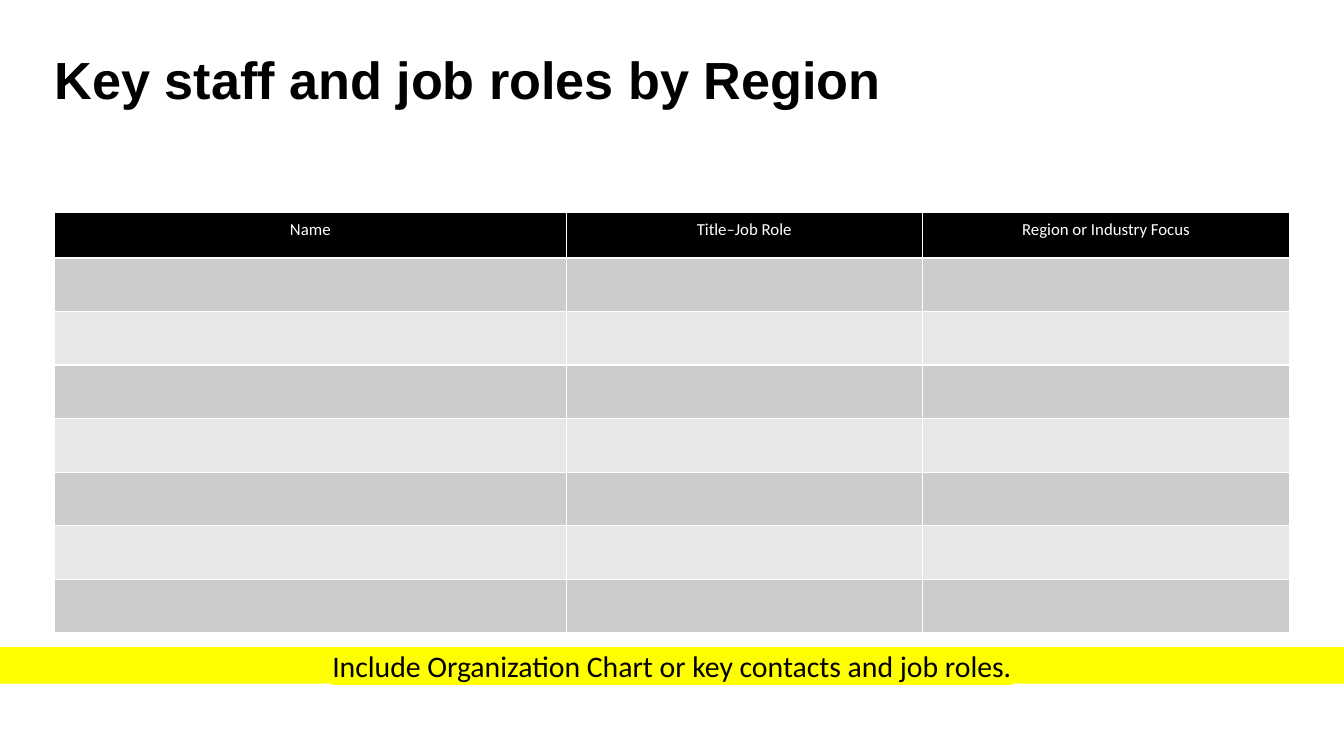
from typing import NamedTuple

from lxml import etree
from pptx import Presentation
from pptx.dml.color import RGBColor
from pptx.enum.shapes import MSO_SHAPE
from pptx.enum.text import MSO_ANCHOR, MSO_AUTO_SIZE, PP_ALIGN
from pptx.oxml.ns import qn
from pptx.util import Cm, Pt

RECT = MSO_SHAPE.RECTANGLE
MIDDLE = MSO_ANCHOR.MIDDLE
FIXED = MSO_AUTO_SIZE.NONE
LEFT, CENTER = PP_ALIGN.LEFT, PP_ALIGN.CENTER

BLACK, WHITE, YELLOW = "000000", "FFFFFF", "FFFF00"
BANDS = ("CCCCCC", "E7E7E7")
EDGE, SPAN = 1.37, 31.14
HEAD_TALL, ROW_TALL, STAFF = 1.14, 1.35, 7


class Column(NamedTuple):
    label: str
    wide: float


COLUMNS = [
    Column("Name", 12.9),
    Column("Title–Job Role", 8.97),
    Column("Region or Industry Focus", 9.27),
]


def paint(target, color: str) -> None:
    target.solid()
    target.fore_color.rgb = RGBColor.from_string(color)


def write(frame, text: str, *, size: float, color: str, font: str = "Calibri",
          bold: bool = False, align=CENTER, mark: str = "", space: float = 1.0) -> None:
    para = frame.paragraphs[0]
    para.alignment = align
    para.line_spacing = space
    run = para.add_run()
    run.text = text
    run.font.size = Pt(size)
    run.font.bold = bold
    paint(run.font.fill, color)
    if mark:
        light = etree.SubElement(run.font._element, qn("a:highlight"))
        etree.SubElement(light, qn("a:srgbClr"), val=mark)
    run.font.name = font


def settle(frame) -> None:
    frame.margin_left = frame.margin_right = 0
    frame.margin_top = frame.margin_bottom = 0
    frame.word_wrap = True
    frame.auto_size = FIXED
    frame.vertical_anchor = MIDDLE


def add_title(slide) -> None:
    title = slide.shapes.title
    title.left, title.top = Cm(EDGE), Cm(1.35)
    title.width, title.height = Cm(SPAN), Cm(1.47)
    settle(title.text_frame)
    write(title.text_frame, "Key staff and job roles by Region", size=37.3,
          color=BLACK, font="Arial", bold=True, align=LEFT, space=0.9)


def add_banner(slide, wide: int) -> None:
    banner = slide.shapes.add_shape(RECT, 0, Cm(16.31), wide, Cm(0.92))
    banner.shadow.inherit = False
    paint(banner.fill, YELLOW)
    banner.line.fill.background()
    settle(banner.text_frame)
    write(banner.text_frame, "Include Organization Chart or key contacts and job roles.",
          size=21.3, color=BLACK, mark=YELLOW)


def add_roster(slide) -> None:
    tall = HEAD_TALL + STAFF * ROW_TALL
    table = slide.shapes.add_table(STAFF + 1, len(COLUMNS), Cm(EDGE), Cm(5.36),
                                   Cm(SPAN), Cm(tall)).table
    for row in table.rows:
        row.height = Cm(ROW_TALL)
    table.rows[0].height = Cm(HEAD_TALL)
    for col, item in enumerate(COLUMNS):
        table.columns[col].width = Cm(item.wide)
        head = table.cell(0, col)
        paint(head.fill, BLACK)
        head.margin_left = head.margin_right = Cm(0.34)
        head.margin_top = head.margin_bottom = Cm(0.17)
        write(head.text_frame, item.label, size=12, color=WHITE)
        for row in range(STAFF):
            paint(table.cell(row + 1, col).fill, BANDS[row % 2])


def main() -> None:
    deck = Presentation()
    deck.slide_width, deck.slide_height = Cm(33.87), Cm(19.05)
    slide = deck.slides.add_slide(deck.slide_layouts[5])
    add_title(slide)
    add_banner(slide, deck.slide_width)
    add_roster(slide)
    deck.save("out.pptx")


if __name__ == "__main__":
    main()
